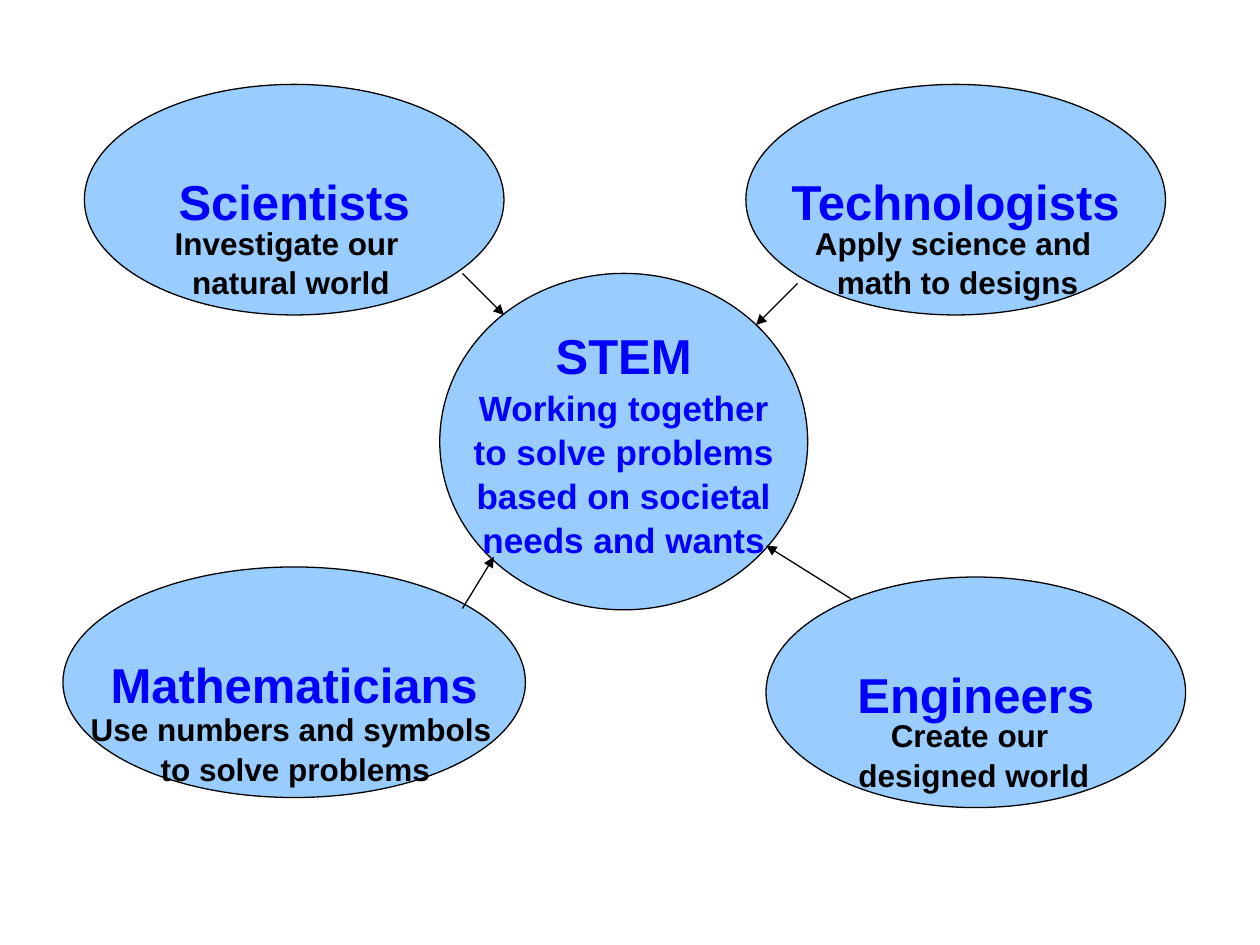
"""Build a slide showing four professions feeding into STEM."""
from lxml.etree import SubElement
from pptx import Presentation
from pptx.dml.color import RGBColor
from pptx.enum.shapes import MSO_CONNECTOR, MSO_SHAPE
from pptx.enum.text import MSO_ANCHOR, PP_ALIGN
from pptx.oxml.ns import qn
from pptx.util import Inches, Pt

COLORS = {"fill": "99CCFF", "line": "000000", "heading": "0000FF", "body": "000000"}
FONT = "Arial"
OVAL_W, OVAL_H = 3.33, 1.83
CAPTION_W, CAPTION_H = 5, 0.71

PROFESSIONS = [
    ("Scientists", 0.67, 0.67, OVAL_W),
    ("Technologists", 5.92, 0.67, OVAL_W),
    ("Mathematicians", 0.5, 4.5, 3.67),
    ("Engineers", 6.08, 4.58, OVAL_W),
]
STEM_LINES = [
    ("STEM", 28),
    ("Working together", 20),
    ("to solve problems", 20),
    ("based on societal", 20),
    ("needs and wants", 20),
]
ARROWS = [
    (3.67, 4.83, 3.92, 4.42),
    (6.75, 4.75, 6.08, 4.33),
    (6.33, 2.25, 6, 2.58),
    (3.67, 2.17, 4, 2.5),
]
CAPTIONS = [
    (-0.19, 1.71, ("Investigate our ", "natural world")),
    (5.1, 1.71, ("Apply science and ", "math to designs")),
    (-0.19, 5.57, ("Use numbers and symbols", " to solve problems")),
    (5.23, 5.62, ("Create our ", "designed world")),
]


def rgb(name):
    return RGBColor.from_string(COLORS[name])


def add_lines(tf, lines, color):
    for i, (text, size) in enumerate(lines):
        p = tf.paragraphs[0] if i == 0 else tf.add_paragraph()
        p.alignment = PP_ALIGN.CENTER
        p.line_spacing = 1.05
        r = p.add_run()
        r.text = text
        r.font.name = FONT
        r.font.size = Pt(size)
        r.font.bold = True
        r.font.color.rgb = rgb(color)


def add_oval(s, left, top, width, height, lines):
    sp = s.shapes.add_shape(
        MSO_SHAPE.OVAL, Inches(left), Inches(top), Inches(width), Inches(height)
    )
    sp.shadow.inherit = False
    sp.fill.solid()
    sp.fill.fore_color.rgb = rgb("fill")
    sp.line.color.rgb = rgb("line")
    sp.line.width = Pt(0.75)
    tf = sp.text_frame
    tf.margin_left = tf.margin_right = tf.margin_top = tf.margin_bottom = 0
    tf.vertical_anchor = MSO_ANCHOR.MIDDLE
    tf.word_wrap = False
    add_lines(tf, lines, "heading")


def add_arrow(s, *ends):
    line = s.shapes.add_connector(MSO_CONNECTOR.STRAIGHT, *map(Inches, ends))
    line.line.color.rgb = rgb("line")
    line.line.width = Pt(0.75)
    SubElement(line.line._get_or_add_ln(), qn("a:tailEnd"), type="triangle")
    SubElement(line._element.spPr, qn("a:effectLst"))


def add_caption(s, left, top, texts):
    sp = s.shapes.add_textbox(
        Inches(left), Inches(top), Inches(CAPTION_W), Inches(CAPTION_H)
    )
    tf = sp.text_frame
    tf.word_wrap = True
    add_lines(tf, [(text, 18) for text in texts], "body")


def main():
    prs = Presentation()
    prs.slide_width, prs.slide_height = Inches(10), Inches(7.5)
    s = prs.slides.add_slide(prs.slide_layouts.get_by_name("Blank"))
    for name, left, top, width in PROFESSIONS:
        add_oval(s, left, top, width, OVAL_H, [(name, 28)])
    add_oval(s, 3.49, 2.17, 2.92, 2.67, STEM_LINES)
    for ends in ARROWS:
        add_arrow(s, *ends)
    for left, top, texts in CAPTIONS:
        add_caption(s, left, top, texts)
    prs.save("out.pptx")


if __name__ == "__main__":
    main()
